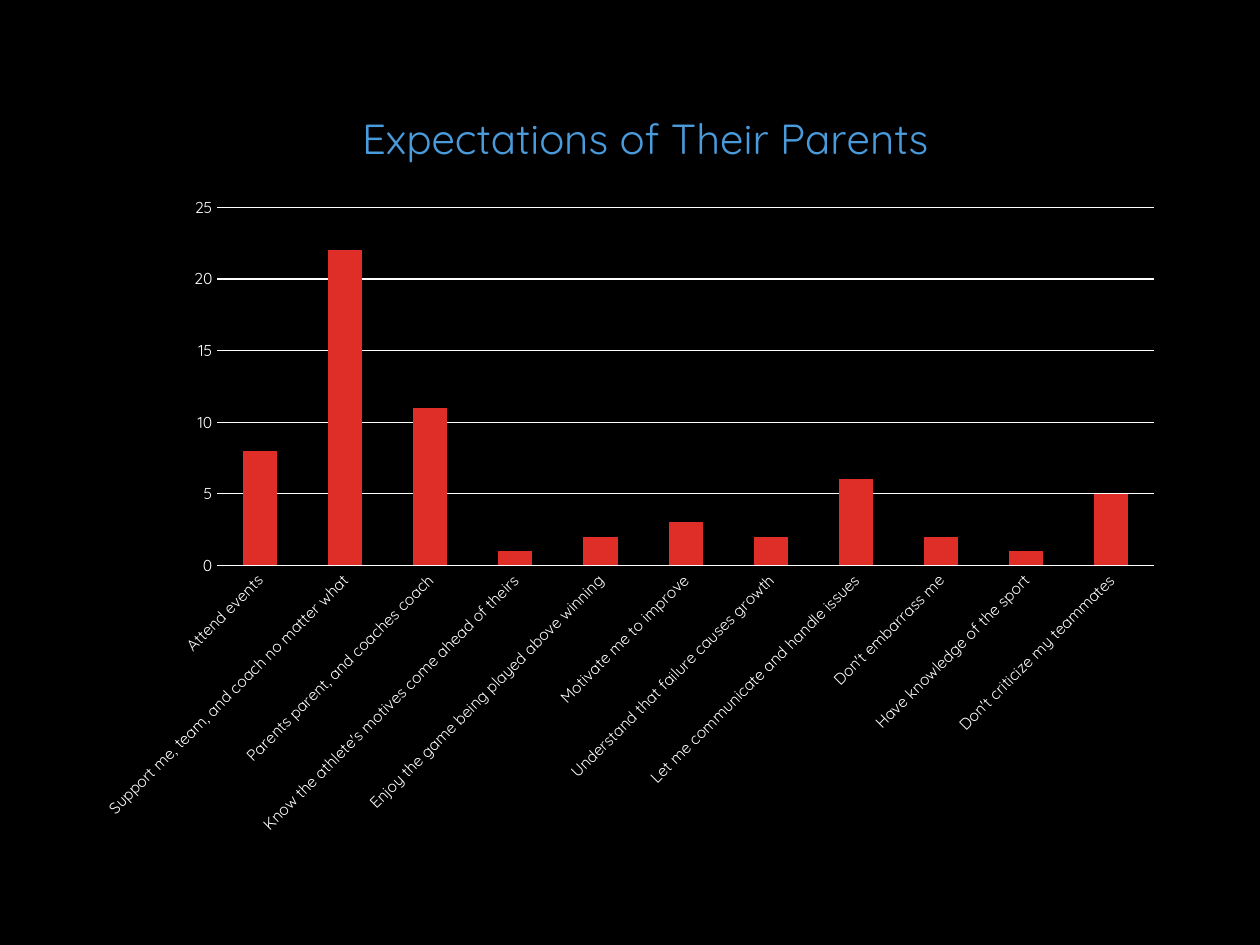
from pptx import Presentation
from pptx.chart.data import CategoryChartData
from pptx.dml.color import RGBColor
from pptx.enum.chart import XL_CHART_TYPE, XL_TICK_MARK
from pptx.oxml import parse_xml
from pptx.oxml.ns import nsdecls, qn
from pptx.util import Pt

COLUMN_STACKED = XL_CHART_TYPE.COLUMN_STACKED
NO_TICK = XL_TICK_MARK.NONE
FONT = "Quicksand"
COLORS = {"background": "000000", "text": "FFFFFF", "title": "4A9BDC", "bar": "DF2E28"}
TITLE = "Expectations of Their Parents"
EXPECTATIONS = {
    "Attend events": 8,
    "Support me, team, and coach no matter what": 22,
    "Parents parent, and coaches coach": 11,
    "Know the athlete's motives come ahead of theirs": 1,
    "Enjoy the game being played above winning": 2,
    "Motivate me to improve": 3,
    "Understand that failure causes growth": 2,
    "Let me communicate and handle issues": 6,
    "Don't embarrass me": 2,
    "Have knowledge of the sport": 1,
    "Don't criticize my teammates": 5,
}


def rgb(name):
    return RGBColor.from_string(COLORS[name])


def style_font(font, size, color):
    font.name = FONT
    font.size = Pt(size)
    font.bold = False
    font.color.rgb = rgb(color)


def write_text(tf, text, size=10, color="text"):
    p = tf.paragraphs[0]
    r = p.add_run()
    r.text = text
    style_font(r.font, size, color)


def set_layout(element, index, chart_size, target=None, **points):
    """Place a chart part by points from the chart's top left corner."""
    for old in element.findall(qn("c:layout")):
        element.remove(old)
    width, height = chart_size
    parts = f'<c:layoutTarget val="{target}"/>' if target else ""
    parts += "".join(f'<c:{key}Mode val="edge"/>' for key in "xy")
    parts += "".join(f'<c:{key} val="{val / (width if key in "xw" else height)}"/>'
                     for key, val in points.items())
    element.insert(index, parse_xml(
        f'<c:layout {nsdecls("c")}><c:manualLayout>{parts}</c:manualLayout></c:layout>'))


def style_axis(axis):
    axis.major_tick_mark = NO_TICK
    axis.minor_tick_mark = NO_TICK
    axis.format.line.fill.background()
    style_font(axis.tick_labels.font, 9, "text")


def add_expectations_chart(slide, left, top, width, height):
    data = CategoryChartData()
    data.categories = list(EXPECTATIONS)
    data.add_series("Series 1", list(EXPECTATIONS.values()))
    chart = slide.shapes.add_chart(COLUMN_STACKED, Pt(left), Pt(top),
                                   Pt(width), Pt(height), data).chart
    style_font(chart.font, 10, "text")
    chart.has_legend = False

    chart.has_title = True
    title = chart.chart_title
    write_text(title.text_frame, TITLE, size=24, color="title")
    title.include_in_layout = False
    size = (width, height)
    set_layout(title._element, 1, size, x=154.6, y=1.8)
    set_layout(chart._chartSpace.chart.plotArea, 0, size, "inner",
               x=76.2, y=63.6, w=535.3, h=204.6)

    plot = chart.plots[0]
    plot.vary_by_categories = False
    plot.gap_width = 150
    plot.overlap = 100
    fill = plot.series[0].format.fill
    fill.solid()
    fill.fore_color.rgb = rgb("bar")

    category_axis, value_axis = chart.category_axis, chart.value_axis
    for axis in (category_axis, value_axis):
        style_axis(axis)
    label_body = category_axis._element.find(qn("c:txPr")).find(qn("a:bodyPr"))
    label_body.set("rot", str(-45 * 60000))
    value_axis.minimum_scale = 0
    value_axis.maximum_scale = 25
    value_axis.major_unit = 5
    value_axis.has_major_gridlines = True
    grid = value_axis.major_gridlines.format.line
    grid.color.rgb = rgb("text")
    grid.width = Pt(0.75)


def main():
    prs = Presentation()
    prs.slide_width, prs.slide_height = Pt(720), Pt(540)
    slide = prs.slides.add_slide(prs.slide_layouts[6])
    background = slide.background.fill
    background.solid()
    background.fore_color.rgb = rgb("background")
    add_expectations_chart(slide, 48, 55, 624, 430)
    prs.save("out.pptx")


if __name__ == "__main__":
    main()
